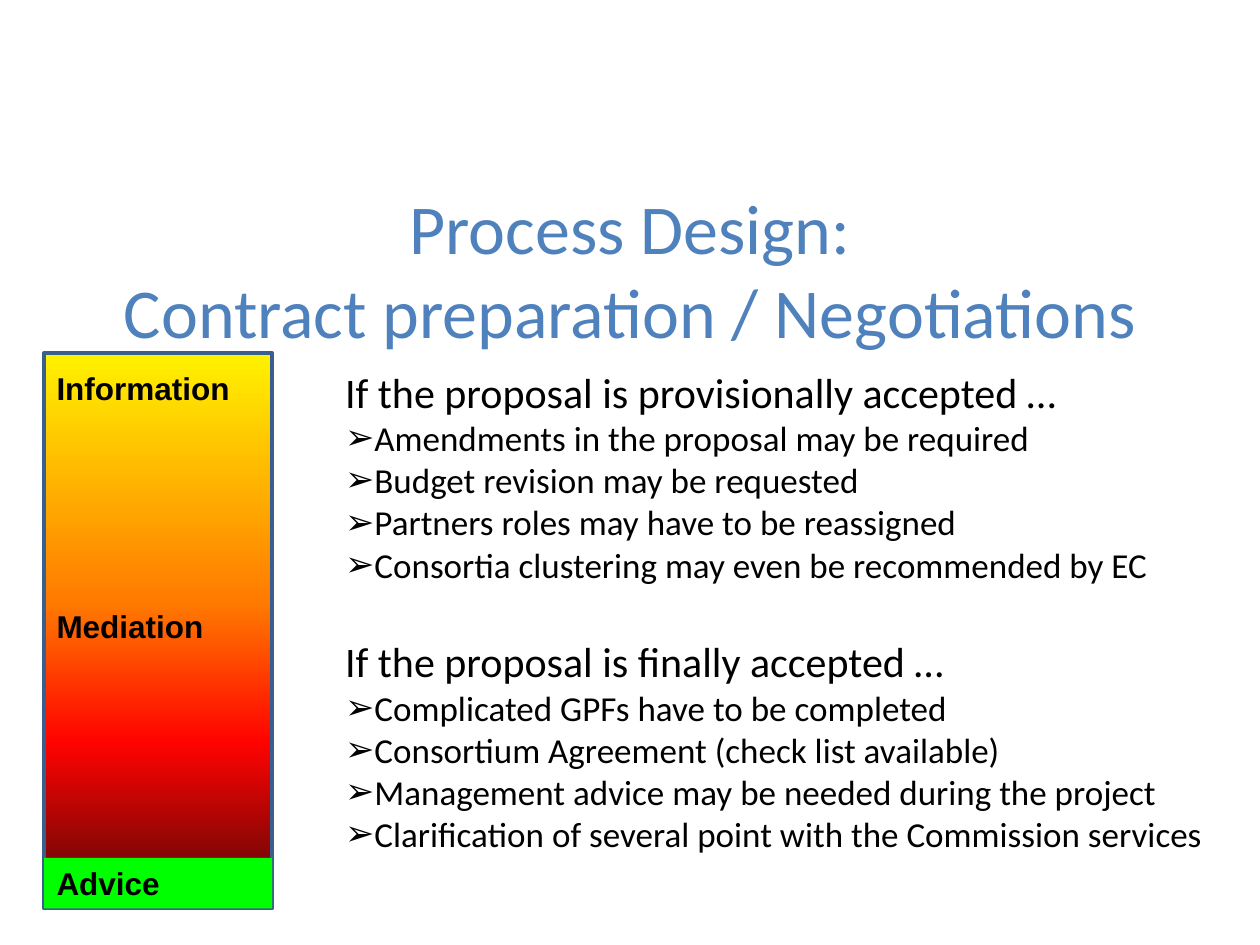
from lxml.etree import SubElement
from pptx import Presentation
from pptx.dml.color import RGBColor
from pptx.enum.shapes import MSO_SHAPE as Shape
from pptx.enum.text import MSO_ANCHOR as Anchor, PP_ALIGN as Align
from pptx.oxml.ns import qn
from pptx.util import Inches, Pt

BLACK = RGBColor(0x00, 0x00, 0x00)
TITLE_BLUE = RGBColor(0x4F, 0x81, 0xBD)
BORDER_BLUE = RGBColor(0x3A, 0x5F, 0x8C)
GREEN = RGBColor(0x00, 0xFF, 0x00)
YELLOW = RGBColor(0xFF, 0xF2, 0x00)
ORANGE = RGBColor(0xFF, 0x7A, 0x00)
RED = RGBColor(0xFF, 0x03, 0x00)
DARK_RED = RGBColor(0x4D, 0x08, 0x08)

HEAT_STOPS = [(0, YELLOW), (45, ORANGE), (70, RED), (100, DARK_RED)]
SECTIONS = [
    ("If the proposal is provisionally accepted …", [
        "Amendments in the proposal may be required",
        "Budget revision may be requested",
        "Partners roles may have to be reassigned",
        "Consortia clustering may even be recommended by EC",
    ]),
    ("If the proposal is finally accepted …", [
        "Complicated GPFs have to be completed",
        "Consortium Agreement (check list available)",
        "Management advice may be needed during the project",
        "Clarification of several point with the Commission services",
    ]),
]

presentation = Presentation()
presentation.slide_width = Inches(10)
presentation.slide_height = Inches(7.5)
slide = presentation.slides.add_slide(presentation.slide_layouts[6])
shapes = slide.shapes

bar_left, bar_top, bar_width, bar_height = 0.35, 2.8, 1.81, 4.41
label_height = 0.4
bar_bottom = bar_top + bar_height


def add_run(paragraph, text, size, color=BLACK, font="Calibri", bold=False):
    run = paragraph.add_run()
    run.text = text
    run.font.name = font
    run.font.size = Pt(size)
    run.font.bold = bold
    run.font.color.rgb = color


def add_bullet(paragraph, character, indent):
    """Give the paragraph a bullet with a hanging indent."""
    properties = paragraph._p.get_or_add_pPr()
    properties.set("marL", str(indent))
    properties.set("indent", str(-indent))
    SubElement(properties, qn("a:buFont"), typeface="Arial")
    SubElement(properties, qn("a:buChar"), char=character)


# Title
title = shapes.add_textbox(Inches(0.5), Inches(1.7), Inches(9), Inches(0.87))
title.text_frame.word_wrap = True
title.text_frame.vertical_anchor = Anchor.MIDDLE
paragraph = title.text_frame.paragraphs[0]
paragraph.alignment = Align.CENTER
add_run(paragraph, "Process Design:", 40, TITLE_BLUE)
paragraph.add_line_break()
add_run(paragraph, "Contract preparation / Negotiations", 40, TITLE_BLUE)

# Heat bar, yellow at the top to dark red at the bottom
heat_bar = shapes.add_shape(Shape.RECTANGLE, Inches(bar_left), Inches(bar_top),
                            Inches(bar_width), Inches(bar_height))
heat_bar.shadow.inherit = False
heat_bar.line.color.rgb = BORDER_BLUE
heat_bar.line.width = Pt(2)
heat_bar.fill.gradient()
gradient = heat_bar._element.spPr.find(qn("a:gradFill"))
stop_list = gradient.find(qn("a:gsLst"))
for stop in list(stop_list):
    stop_list.remove(stop)
for percent, color in HEAT_STOPS:
    stop = SubElement(stop_list, qn("a:gs"), pos=str(percent * 1000))
    SubElement(stop, qn("a:srgbClr"), val=str(color))
gradient.find(qn("a:lin")).set("ang", str(90 * 60000))

# Labels on the bar
for text, top, fill in [
    ("Information", 2.88, None),
    ("Mediation", 4.77, None),
    ("Advice", bar_bottom - label_height, GREEN),
]:
    label = shapes.add_shape(Shape.RECTANGLE, Inches(bar_left), Inches(top),
                             Inches(bar_width), Inches(label_height))
    label.shadow.inherit = False
    label.line.fill.background()
    if fill is None:
        label.fill.background()
    else:
        label.fill.solid()
        label.fill.fore_color.rgb = fill
    label.text_frame.word_wrap = True
    label.text_frame.vertical_anchor = Anchor.MIDDLE
    paragraph = label.text_frame.paragraphs[0]
    paragraph.alignment = Align.LEFT
    add_run(paragraph, text, 18, font="Arial", bold=True)

# Two sections of bulleted advice
body = shapes.add_textbox(Inches(2.64), Inches(2.86), Inches(7.09), Inches(4.01))
body.text_frame.word_wrap = True
for index, (heading, points) in enumerate(SECTIONS):
    if index == 0:
        paragraph = body.text_frame.paragraphs[0]
    else:
        paragraph = body.text_frame.add_paragraph()
        paragraph.space_before = Pt(29)
    paragraph.alignment = Align.JUSTIFY
    add_run(paragraph, heading, 24)
    for point in points:
        paragraph = body.text_frame.add_paragraph()
        paragraph.alignment = Align.JUSTIFY
        add_bullet(paragraph, "➢", Inches(0.23))
        add_run(paragraph, point, 20)

presentation.save("out.pptx")
